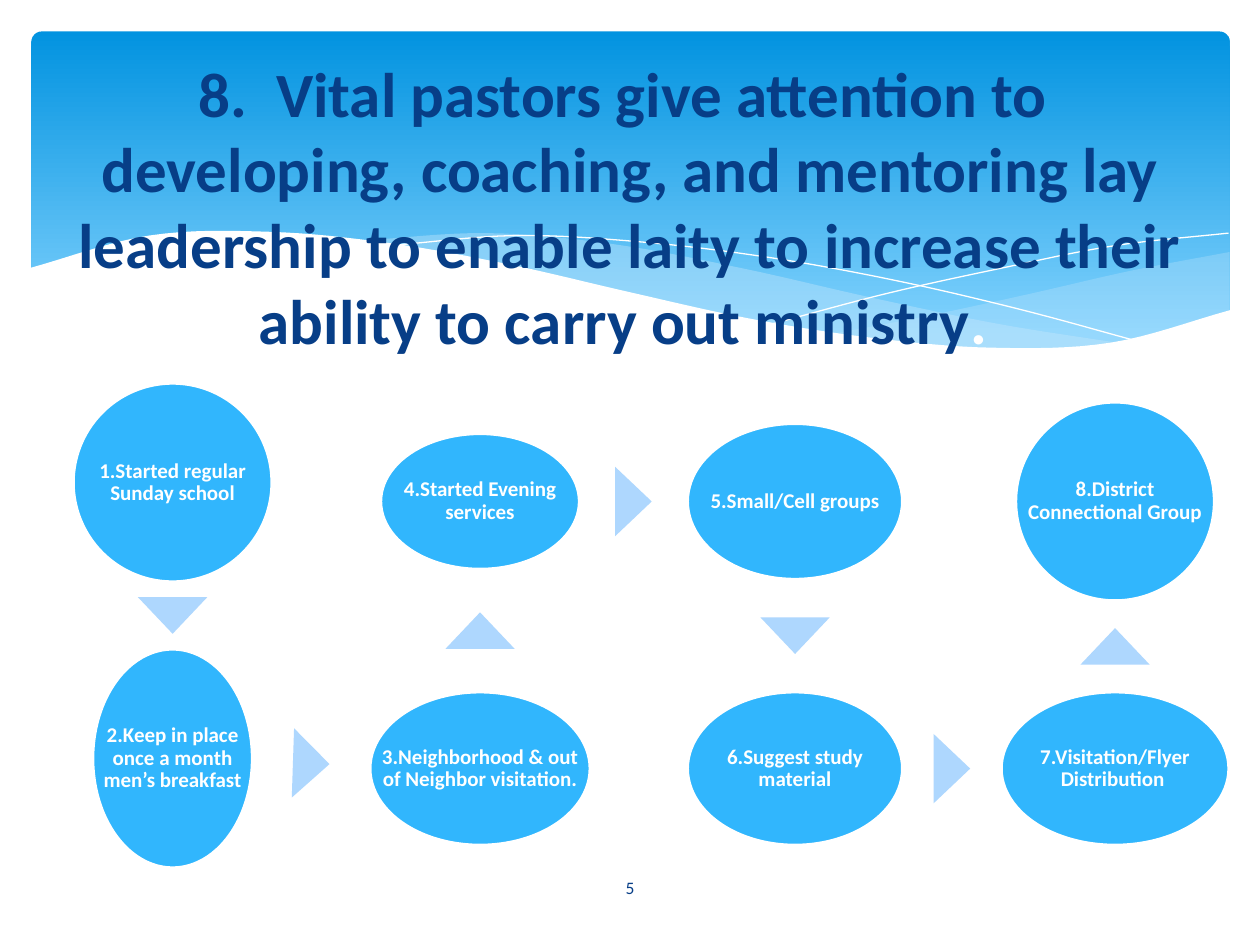
from dataclasses import dataclass
from math import atan2, degrees

from lxml import etree
from pptx import Presentation
from pptx.dml.color import RGBColor
from pptx.enum.shapes import MSO_SHAPE as Shape
from pptx.enum.text import MSO_ANCHOR as Anchor, PP_ALIGN as Align
from pptx.oxml.ns import qn
from pptx.util import Inches, Pt

FONT = "Calibri"
NAVY, WHITE, SKY, PALE, MIST = "073E87", "FFFFFF", "31B6FD", "AED7FE", "C6E7FC"
BAND_TOP, BAND_BOTTOM = "0293E0", "83D3FE"
SAMPLES = 8  # straight pieces between two neighbouring heights of a curve

TITLE = ("8.  Vital pastors give attention to  developing, coaching, and mentoring lay "
         "leadership to enable laity to increase their ability to carry out ministry")

# Each step: text, width, height. The steps run down one column and up the next.
STEPS = [
    ("1.Started regular Sunday school", 1.57, 1.57),
    ("2.Keep in place once a month men’s breakfast", 1.26, 1.73),
    ("3.Neighborhood & out of Neighbor visitation.", 1.74, 1.21),
    ("4.Started Evening services", 1.57, 1.07),
    ("5.Small/Cell groups", 1.7, 1.23),
    ("6.Suggest study material", 1.7, 1.21),
    ("7.Visitation/Flyer Distribution ", 1.8, 1.21),
    ("8.District Connectional Group", 1.57, 1.57),
]
# Each column: centre x, centre y of its upper step, centre y of its lower step.
COLUMNS = [(0.87, 0.83, 3.02), (3.31, 0.98, 3.1), (5.81, 0.98, 3.1), (8.35, 0.98, 3.1)]


@dataclass
class Oval:
    text: str
    x: float
    y: float
    width: float
    height: float


def color(hex_string):
    return RGBColor.from_string(hex_string)


def paint(shape, fill=None, line=None, line_width=0, opacity=100):
    shape.shadow.inherit = False
    if fill:
        shape.fill.solid()
        shape.fill.fore_color.rgb = color(fill)
        if opacity < 100:
            rgb = shape.fill._xPr.find(".//" + qn("a:srgbClr"))
            etree.SubElement(rgb, qn("a:alpha")).set("val", str(opacity * 1000))
    else:
        shape.fill.background()
    if line:
        shape.line.color.rgb = color(line)
        shape.line.width = Pt(line_width)
    else:
        shape.line.fill.background()


def centred_box(x, y, width, height):
    return [Inches(value) for value in (x - width / 2, y - height / 2, width, height)]


def add_text(slide, box, parts, size, bold=False, margin=None, line_spacing=None):
    """Add one centred paragraph; parts are (text, colour) pairs."""
    frame = slide.shapes.add_textbox(*box).text_frame
    frame.word_wrap = True
    frame.vertical_anchor = Anchor.MIDDLE
    if margin is not None:
        frame.margin_left = frame.margin_right = Inches(margin)
        frame.margin_top = frame.margin_bottom = Inches(margin)
    paragraph = frame.paragraphs[0]
    paragraph.alignment = Align.CENTER
    if line_spacing:
        paragraph.line_spacing = line_spacing
    for text, hex_string in parts:
        run = paragraph.add_run()
        run.text = text
        run.font.name, run.font.size, run.font.bold = FONT, Pt(size), bold
        run.font.color.rgb = color(hex_string)


def smooth_curve(start, end, heights):
    """Return points of a Catmull-Rom curve through heights set evenly from start to end."""
    spacing = (end - start) / (len(heights) - 1)
    before = 2 * heights[0] - heights[1]
    after = 2 * heights[-1] - heights[-2]
    padded = [before, *heights, after]
    points = []
    for index in range(len(heights) - 1):
        a, b, c, d = padded[index:index + 4]
        for sample in range(SAMPLES):
            t = sample / SAMPLES
            y = b + t * ((c - a) + t * ((2 * a - 5 * b + 4 * c - d)
                                        + t * (3 * b - a - 3 * c + d))) / 2
            points.append((start + (index + t) * spacing, y))
    return points + [(end, heights[-1])]


def add_outline(slide, left, top, points, close):
    first, *others = [(Inches(x), Inches(y)) for x, y in points]
    builder = slide.shapes.build_freeform(*first)
    builder.add_line_segments(others, close=close)
    return builder.convert_to_shape(Inches(left), Inches(top))


def add_wave(slide, left, top, span, upper, lower, fill, opacity=100):
    """Fill the area between an upper and a lower curve."""
    points = smooth_curve(*span, upper) + smooth_curve(*span, lower)[::-1]
    paint(add_outline(slide, left, top, points, close=True), fill, opacity=opacity)


def add_hairline(slide, left, top, span, heights):
    points = smooth_curve(*span, heights)
    paint(add_outline(slide, left, top, points, close=False), line=WHITE)


def add_header(slide, left, top):
    band = slide.shapes.add_shape(
        Shape.ROUNDED_RECTANGLE, Inches(left + 0.25), Inches(top + 0.25),
        Inches(9.51), Inches(2.7))
    band.adjustments[0] = 0.03
    paint(band)
    band.fill.gradient()
    band.fill.gradient_angle = 270
    shades = ((0, BAND_TOP), (0.9, BAND_BOTTOM))
    for stop, (position, shade) in zip(band.fill.gradient_stops, shades):
        stop.position = position
        stop.color.rgb = color(shade)

    add_wave(slide, left, top, span=(6.61, 9.76), fill=MIST, opacity=29,
             upper=[2.65, 2.5, 2.33, 2.15, 2], lower=[2.65, 2.75, 2.78, 2.7, 2.47])
    add_wave(slide, left, top, span=(2.86, 8.93), fill=MIST, opacity=40,
             upper=[1.91, 1.85, 1.94, 2.13, 2.36, 2.57, 2.73],
             lower=[1.91, 2.08, 2.31, 2.53, 2.69, 2.78, 2.73])
    add_hairline(slide, left, top, (3.09, 9.07), [1.95, 1.87, 1.92, 2.04, 2.22, 2.45, 2.72])
    add_hairline(slide, left, top, (6.13, 9.75), [2.57, 2.33, 2.13, 1.95, 1.85])
    add_wave(slide, left, top, span=(0.23, 9.77), fill=WHITE,
             upper=[2.13, 1.87, 1.84, 1.93, 2.1, 2.32, 2.53, 2.68, 2.76, 2.72, 2.46],
             lower=[3.29, 3.29])


def place_ovals(left, top):
    ovals = []
    for index, (text, width, height) in enumerate(STEPS):
        column, second = divmod(index, 2)
        x, upper_y, lower_y = COLUMNS[column]
        goes_up = column % 2 == 1
        y = upper_y if goes_up == bool(second) else lower_y
        ovals.append(Oval(text, left + x, top + y, width, height))
    return ovals


def middle_of_gap(start, end, start_size, end_size):
    """Return the middle between the facing edges of two parts on one axis."""
    direction = 1 if end > start else -1
    return (start + end + direction * (start_size - end_size) / 2) / 2


def add_arrow(slide, start, end):
    """Put a triangle midway between two ovals, pointing at the second."""
    dx, dy = end.x - start.x, end.y - start.y
    if abs(dx) > abs(dy):
        x, y = middle_of_gap(start.x, end.x, start.width, end.width), (start.y + end.y) / 2
    else:
        x, y = start.x, middle_of_gap(start.y, end.y, start.height, end.height)
    arrow = slide.shapes.add_shape(Shape.ISOSCELES_TRIANGLE, *centred_box(x, y, 0.55, 0.29))
    arrow.rotation = degrees(atan2(dy, dx)) + 90
    paint(arrow, PALE)


def add_flow(slide, left, top):
    ovals = place_ovals(left, top)
    for oval in ovals:
        box = centred_box(oval.x, oval.y, oval.width, oval.height)
        paint(slide.shapes.add_shape(Shape.OVAL, *box), SKY, WHITE, 1.25)
        add_text(slide, box, [(oval.text, WHITE)], 12, bold=True, margin=0.02, line_spacing=0.9)
    for start, end in zip(ovals, ovals[1:]):
        add_arrow(slide, start, end)


def main():
    presentation = Presentation()
    presentation.slide_width, presentation.slide_height = Inches(10), Inches(7.5)
    slide = presentation.slides.add_slide(presentation.slide_layouts[6])
    add_header(slide, 0, 0)
    add_flow(slide, 0.5, 3)
    add_text(slide, centred_box(5, 7.04, 1.27, 0.4), [("5", NAVY)], 10)
    add_text(slide, centred_box(5, 1.63, 9.5, 3.25), [(TITLE, NAVY), (". ", WHITE)], 36, bold=True)
    presentation.save("out.pptx")


if __name__ == "__main__":
    main()
